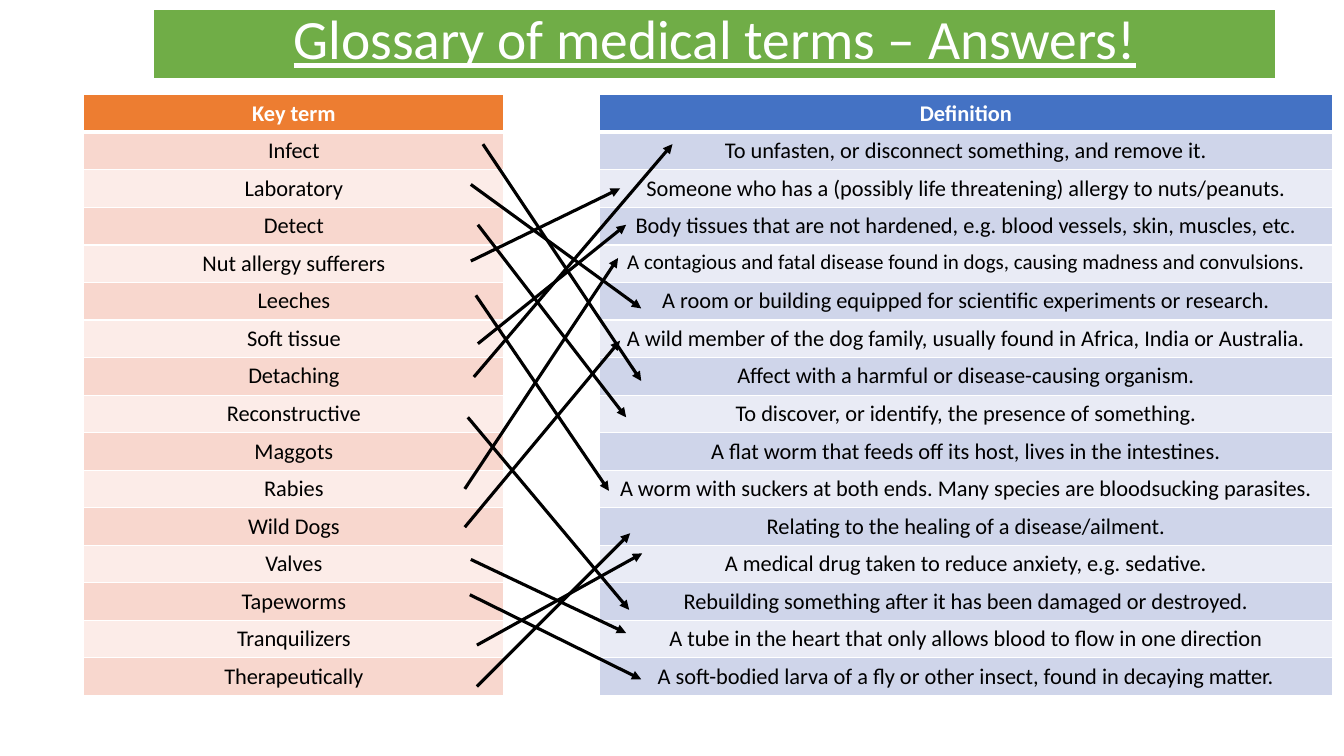
from dataclasses import dataclass

from lxml import etree
from pptx import Presentation
from pptx.dml.color import RGBColor
from pptx.enum.shapes import MSO_CONNECTOR
from pptx.enum.text import MSO_ANCHOR, MSO_AUTO_SIZE, PP_ALIGN
from pptx.oxml.ns import qn
from pptx.util import Inches, Pt

CENTER = PP_ALIGN.CENTER
MIDDLE = MSO_ANCHOR.MIDDLE
NO_AUTOFIT = MSO_AUTO_SIZE.NONE
STRAIGHT = MSO_CONNECTOR.STRAIGHT
TITLE_ONLY = 5


@dataclass(frozen=True)
class Theme:
    font: str = "Calibri"
    white: str = "FFFFFF"
    black: str = "000000"
    title_fill: str = "70AD47"
    term_header: str = "ED7D31"
    term_bands: tuple = ("F8D7CE", "FCECE8")
    definition_header: str = "4472C4"
    definition_bands: tuple = ("CFD5EA", "E9EBF5")
    title_size: float = 39.6
    table_size: float = 16
    long_size: float = 15


THEME = Theme()

TERMS = [
    "Infect", "Laboratory", "Detect", "Nut allergy sufferers", "Leeches",
    "Soft tissue", "Detaching", "Reconstructive", "Maggots", "Rabies",
    "Wild Dogs", "Valves", "Tapeworms", "Tranquilizers", "Therapeutically",
]
DEFINITIONS = [
    "To unfasten, or disconnect something, and remove it.",
    "Someone who has a (possibly life threatening) allergy to nuts/peanuts.",
    "Body tissues that are not hardened, e.g. blood vessels, skin, muscles, etc.",
    "A contagious and fatal disease found in dogs, causing madness and convulsions.",
    "A room or building equipped for scientific experiments or research.",
    "A wild member of the dog family, usually found in Africa, India or Australia.",
    "Affect with a harmful or disease-causing organism.",
    "To discover, or identify, the presence of something.",
    "A flat worm that feeds off its host, lives in the intestines.",
    "A worm with suckers at both ends. Many species are bloodsucking parasites.",
    "Relating to the healing of a disease/ailment.",
    "A medical drug taken to reduce anxiety, e.g. sedative.",
    "Rebuilding something after it has been damaged or destroyed.",
    "A tube in the heart that only allows blood to flow in one direction",
    "A soft-bodied larva of a fly or other insect, found in decaying matter.",
]
LONGEST_DEFINITION = max(DEFINITIONS, key=len)

# Start x, start y, end x, end y of each term's arrow, from the arrow area's corner
ANSWER_ARROWS = {
    "Infect": (0.19, 0.03, 1.76, 2.38),
    "Laboratory": (0.07, 0.43, 1.76, 1.66),
    "Detect": (0.14, 0.83, 1.61, 2.74),
    "Nut allergy sufferers": (0.07, 1.19, 1.55, 0.47),
    "Leeches": (0.12, 1.53, 1.44, 3.47),
    "Soft tissue": (0.14, 2.01, 1.61, 0.83),
    "Detaching": (0.10, 2.34, 2.07, 0.03),
    "Reconstructive": (0.04, 2.74, 1.64, 4.65),
    "Rabies": (0.01, 3.45, 1.53, 1.16),
    "Wild Dogs": (0.01, 3.83, 1.55, 1.98),
    "Valves": (0.07, 4.15, 1.61, 4.88),
    "Tapeworms": (0.06, 4.50, 1.76, 5.34),
    "Tranquilizers": (0.13, 5.00, 1.77, 4.09),
    "Therapeutically": (0.13, 5.41, 1.65, 3.89),
}


def write_text(text_frame, text, *, size, color, bold=False, underline=False,
               line_spacing=None):
    paragraph = text_frame.paragraphs[0]
    paragraph.alignment = CENTER
    paragraph.line_spacing = line_spacing
    run = paragraph.add_run()
    run.text = text
    run.font.name = THEME.font
    run.font.size = Pt(size)
    run.font.color.rgb = RGBColor.from_string(color)
    run.font.bold = bold
    run.font.underline = underline


def set_cell_borders(cell, **widths):
    """Draw white borders; widths are points by side: L, R, T, B."""
    properties = cell._tc.get_or_add_tcPr()
    for side, width in widths.items():
        line = etree.SubElement(properties, qn(f"a:ln{side}"), w=str(Pt(width)))
        fill = etree.SubElement(line, qn("a:solidFill"))
        etree.SubElement(fill, qn("a:srgbClr"), val=THEME.white)


def add_title(slide, left, top, width, height):
    title = slide.shapes.title
    title.left, title.top = Inches(left), Inches(top)
    title.width, title.height = Inches(width), Inches(height)
    title.fill.solid()
    title.fill.fore_color.rgb = RGBColor.from_string(THEME.title_fill)
    title.line.color.rgb = RGBColor.from_string(THEME.white)
    title.line.width = Pt(1.5)
    frame = title.text_frame
    frame.auto_size = NO_AUTOFIT
    frame.word_wrap = True
    frame.vertical_anchor = MIDDLE
    write_text(frame, "Glossary of medical terms – Answers!", size=THEME.title_size,
               color=THEME.white, underline=True, line_spacing=0.8)


def add_glossary_table(slide, left, top, width, height, header, entries,
                       header_fill, bands):
    rows = [header, *entries]
    table = slide.shapes.add_table(len(rows), 1, Inches(left), Inches(top),
                                   Inches(width), Inches(height)).table
    for index, text in enumerate(rows):
        cell = table.cell(index, 0)
        is_header = index == 0
        set_cell_borders(cell, L=1, R=1, T=3 if index == 1 else 1,
                         B=3 if is_header else 1)
        cell.fill.solid()
        fill = header_fill if is_header else bands[(index - 1) % 2]
        cell.fill.fore_color.rgb = RGBColor.from_string(fill)
        size = THEME.long_size if text == LONGEST_DEFINITION else THEME.table_size
        write_text(cell.text_frame, text, size=size, bold=is_header,
                   color=THEME.white if is_header else THEME.black)


def add_answer_arrows(slide, left, top):
    for start_x, start_y, end_x, end_y in ANSWER_ARROWS.values():
        arrow = slide.shapes.add_connector(
            STRAIGHT, Inches(left + start_x), Inches(top + start_y),
            Inches(left + end_x), Inches(top + end_y))
        arrow.line.color.rgb = RGBColor.from_string(THEME.black)
        arrow.line.width = Pt(2.25)
        etree.SubElement(arrow.line._get_or_add_ln(), qn("a:tailEnd"), type="triangle")
        etree.SubElement(arrow._element.spPr, qn("a:effectLst"))


def build_glossary_slide(presentation):
    slide = presentation.slides.add_slide(presentation.slide_layouts[TITLE_ONLY])
    # Title band
    add_title(slide, 1.52, 0.09, 11.14, 0.69)
    # Definitions on the right, key terms on the left
    add_glossary_table(slide, 5.94, 0.94, 7.28, 5.96, "Definition", DEFINITIONS,
                       THEME.definition_header, THEME.definition_bands)
    add_glossary_table(slide, 0.83, 0.94, 4.17, 5.96, "Key term", TERMS,
                       THEME.term_header, THEME.term_bands)
    # Arrows from each term to its definition
    add_answer_arrows(slide, 4.6, 1.4)


def main():
    presentation = Presentation()
    presentation.slide_width = Inches(13.33)
    presentation.slide_height = Inches(7.5)
    build_glossary_slide(presentation)
    presentation.save("out.pptx")


if __name__ == "__main__":
    main()
